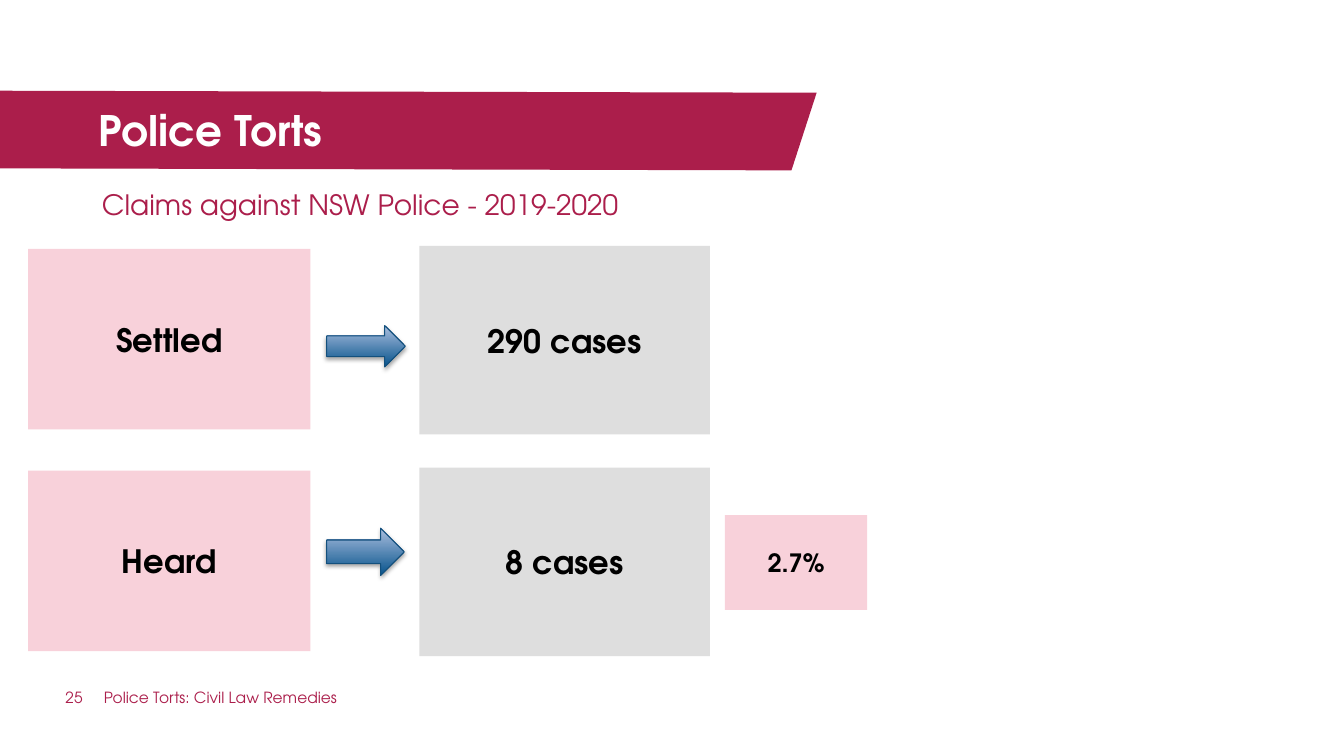
from dataclasses import dataclass

from lxml.etree import SubElement
from pptx import Presentation
from pptx.dml.color import RGBColor
from pptx.enum.shapes import MSO_SHAPE
from pptx.enum.text import MSO_ANCHOR, PP_ALIGN
from pptx.oxml.ns import qn
from pptx.util import Inches, Pt


@dataclass(frozen=True)
class Theme:
    font: str = "TeX Gyre Adventor"
    crimson: RGBColor = RGBColor(0xAB, 0x1E, 0x4B)
    pink: RGBColor = RGBColor(0xF8, 0xD1, 0xDA)
    grey: RGBColor = RGBColor(0xDE, 0xDE, 0xDE)
    white: RGBColor = RGBColor(0xFF, 0xFF, 0xFF)
    black: RGBColor = RGBColor(0, 0, 0)
    arrow_dark: RGBColor = RGBColor(0x07, 0x53, 0x8C)
    arrow_light: RGBColor = RGBColor(0xAA, 0xBE, 0xDE)
    arrow_edge: RGBColor = RGBColor(0x13, 0x50, 0x7D)
    title: int = 30
    box: int = 23
    subtitle: int = 20
    share: int = 18
    footer: int = 11


theme = Theme()
presentation = Presentation()
presentation.slide_width = Inches(13.33)
presentation.slide_height = Inches(7.5)
slide = presentation.slides.add_slide(presentation.slide_layouts[6])
shapes = slide.shapes


def write(frame, text, size, color, bold=False):
    frame.word_wrap = True
    paragraph = frame.paragraphs[0]
    run = paragraph.add_run()
    run.text = text
    font_format = {"name": theme.font, "size": Pt(size), "bold": bold}
    for attribute, value in font_format.items():
        setattr(run.font, attribute, value)
    run.font.color.rgb = color
    return paragraph


def add_box(text, left, top, width, height, fill, size=theme.box):
    box = shapes.add_shape(
        MSO_SHAPE.RECTANGLE, Inches(left), Inches(top), Inches(width), Inches(height)
    )
    box.shadow.inherit = False
    box.fill.solid()
    box.fill.fore_color.rgb = fill
    box.line.fill.background()
    box.text_frame.vertical_anchor = MSO_ANCHOR.MIDDLE
    write(box.text_frame, text, size, theme.black, True).alignment = PP_ALIGN.CENTER


# Title banner
outline = shapes.build_freeform(Inches(0), Inches(0.9))
corners = [(8.1, 0.92), (7.85, 1.69), (0, 1.67)]
outline.add_line_segments([(Inches(x), Inches(y)) for x, y in corners], close=True)
banner = outline.convert_to_shape()
banner.shadow.inherit = False
banner.fill.solid()
banner.fill.fore_color.rgb = theme.crimson
banner.line.fill.background()

# Headings and footer
captions = [
    ("Police Torts", 0.98, 1.04, 6.82, 0.49, theme.title, theme.white, True, 1.0),
    ("Claims against NSW Police - 2019-2020", 1.01, 1.79, 10.87, 0.47,
     theme.subtitle, theme.crimson, False, 1.2),
    ("25", 0.65, 6.83, 0.37, 0.35, theme.footer, theme.crimson, False, 1.0),
    ("Police Torts: Civil Law Remedies", 1.03, 6.83, 6.14, 0.35,
     theme.footer, theme.crimson, False, 1.0),
]
for text, left, top, width, height, size, color, bold, spacing in captions:
    frame = shapes.add_textbox(
        Inches(left), Inches(top), Inches(width), Inches(height)
    ).text_frame
    for side in ("left", "top", "right", "bottom"):
        setattr(frame, f"margin_{side}", 0)
    write(frame, text, size, color, bold).line_spacing = spacing

# Outcome rows: label, arrow, number of cases
outcomes = [
    ("Settled", "290 cases", 2.44, (3.23, 0.78, 0.41)),
    ("Heard", "8 cases", 4.64, (5.24, 0.77, 0.47)),
]
for outcome, cases, row_top, (arrow_top, arrow_width, arrow_height) in outcomes:
    add_box(outcome, 0.28, row_top + 0.03, 2.8, 1.79, theme.pink)
    add_box(cases, 4.16, row_top, 2.88, 1.87, theme.grey)

    arrow = shapes.add_shape(
        MSO_SHAPE.RIGHT_ARROW,
        Inches(3.24), Inches(arrow_top), Inches(arrow_width), Inches(arrow_height),
    )
    arrow.fill.gradient()
    arrow.fill.gradient_angle = 90
    for stop, position, color in zip(
        arrow.fill.gradient_stops, (0, 1), (theme.arrow_dark, theme.arrow_light)
    ):
        stop.position = position
        stop.color.rgb = color
    arrow.line.color.rgb = theme.arrow_edge
    arrow.line.width = Pt(0.75)

    arrow.shadow.inherit = False
    effects = arrow.element.spPr.find(qn("a:effectLst"))
    shadow = SubElement(
        effects, qn("a:outerShdw"), blurRad=str(Pt(3.1)), dist=str(Pt(1.8)),
        dir="5400000", rotWithShape="0",
    )
    shadow_color = SubElement(shadow, qn("a:srgbClr"), val=str(theme.black))
    SubElement(shadow_color, qn("a:alpha"), val="35000")

add_box("2.7%", 7.19, 5.11, 1.41, 0.94, theme.pink, theme.share)

presentation.save("out.pptx")
